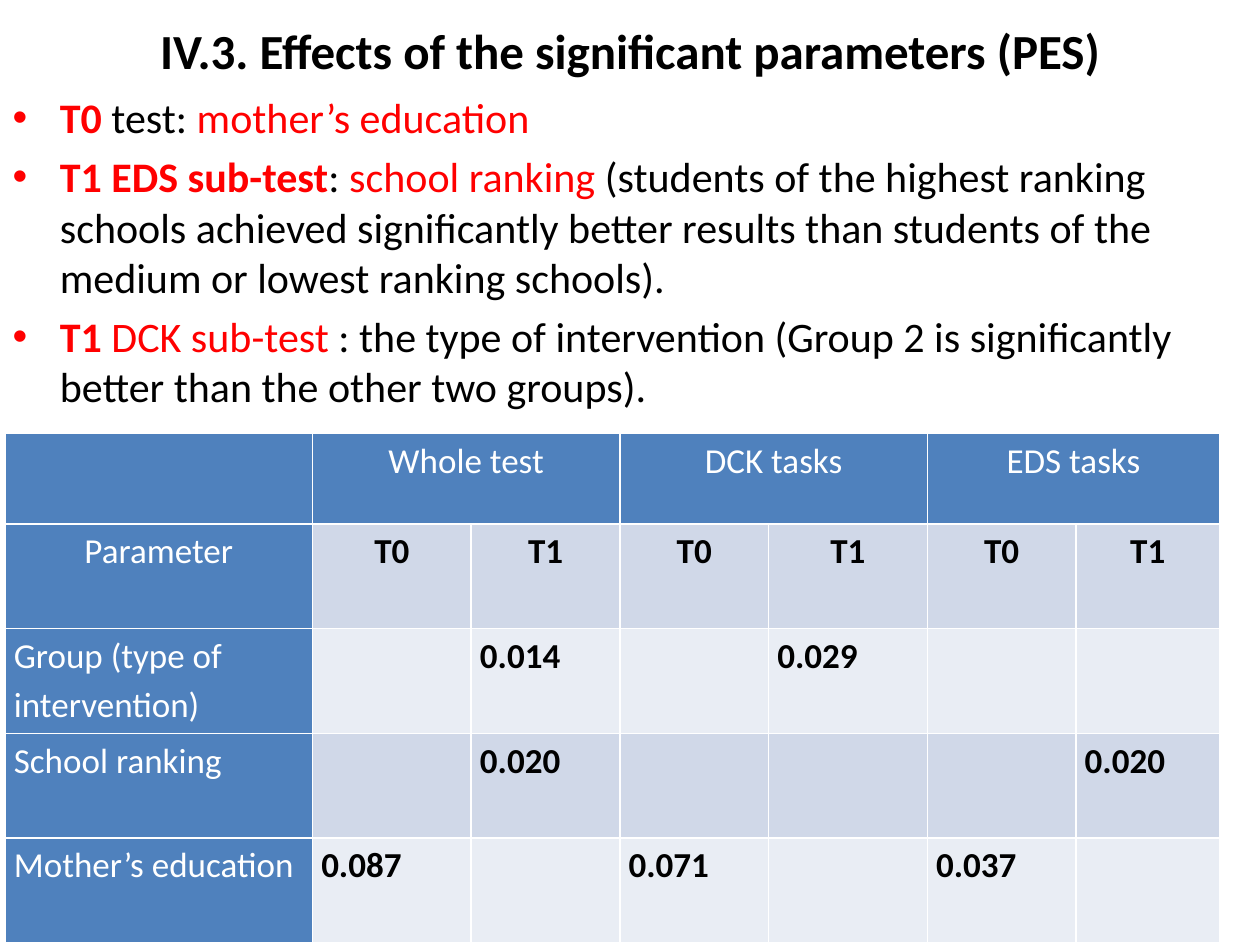
import pptx
import pptx.util
import pptx.dml.color
import pptx.enum.text

Inches, Pt = pptx.util.Inches, pptx.util.Pt
ALIGN = pptx.enum.text.PP_ALIGN
FONT = "Calibri"
COLORS = {"black": "000000", "red": "FF0000", "white": "FFFFFF",
          "header": "4F81BD", "band_dark": "D0D8E8", "band_light": "E9EDF4"}

TITLE = "IV.3. Effects of the significant parameters (PES)"
# Each bullet is a list of (text, colour, bold)
BULLETS = [
    [("T0 ", "red", True), ("test: ", "black", False),
     ("mother’s education", "red", False)],
    [("T1 EDS sub-test", "red", True), (": ", "black", False),
     ("school ranking ", "red", False),
     ("(students of the highest ranking schools achieved significantly better "
      "results than students of the medium or lowest ranking schools).", "black", False)],
    [("T1 ", "red", True), ("DCK sub-test ", "red", False),
     (": the type of intervention (Group 2 is significantly better than "
      "the other two groups).", "black", False)],
]
ROWS = [
    ["", "Whole test", "", "DCK tasks", "", "EDS tasks", ""],
    ["Parameter"] + ["T0", "T1"] * 3,
    ["Group (type of intervention)", "", "0.014", "", "0.029", "", ""],
    ["School ranking", "", "0.020", "", "", "", "0.020"],
    ["Mother’s education", "0.087", "", "0.071", "", "0.037", ""],
]
COL_WIDTHS = [2.44, 1.26, 1.18, 1.18, 1.26, 1.18, 1.14]
ROW_HEIGHTS = [0.72] + [0.83] * 4


def rgb(name):
    return pptx.dml.color.RGBColor.from_string(COLORS[name])


def set_attrs(obj, values):
    for name, value in values.items():
        setattr(obj, name, value)


def place(sp, box):
    names = ("left", "top", "width", "height")
    set_attrs(sp, dict(zip(names, map(Inches, box))))


def add_run(p, text, size, color, bold):
    r = p.add_run()
    r.text = text
    set_attrs(r.font, {"name": FONT, "size": Pt(size), "bold": bold})
    r.font.color.rgb = rgb(color)


def fill_title(s, box):
    sp = s.shapes.title
    place(sp, box)
    tf = sp.text_frame
    tf.auto_size = pptx.enum.text.MSO_AUTO_SIZE.NONE
    add_run(tf.paragraphs[0], TITLE, 28, "black", True)


def fill_bullets(s, box):
    sp = s.placeholders[1]
    place(sp, box)
    tf = sp.text_frame
    tf.auto_size = pptx.enum.text.MSO_AUTO_SIZE.NONE
    for i, runs in enumerate(BULLETS):
        p = tf.add_paragraph() if i else tf.paragraphs[0]
        for text, color, bold in runs:
            add_run(p, text, 24, color, bold)


def format_cell(cell, text, row, col):
    header = row == 0 or col == 0
    band = "band_dark" if row % 2 else "band_light"
    cell.fill.solid()
    cell.fill.fore_color.rgb = rgb("header" if header else band)
    if not text:
        return
    set_attrs(cell, {"margin_left": Inches(0.07), "margin_right": Inches(0.07),
                     "margin_top": 0, "margin_bottom": 0})
    p = cell.text_frame.paragraphs[0]
    set_attrs(p, {"alignment": ALIGN.CENTER if row < 2 else ALIGN.LEFT,
                  "line_spacing": 1.15})
    add_run(p, text, 20, "white" if header else "black", not header)


def add_results_table(s, box):
    table = s.shapes.add_table(len(ROWS), len(COL_WIDTHS), *map(Inches, box)).table
    for column, width in zip(table.columns, COL_WIDTHS):
        column.width = Inches(width)
    for row, height in zip(table.rows, ROW_HEIGHTS):
        row.height = Inches(height)
    # Each test heading spans its T0 and T1 columns
    for col in range(1, len(COL_WIDTHS), 2):
        table.cell(0, col).merge(table.cell(0, col + 1))
    for i, values in enumerate(ROWS):
        for j, text in enumerate(values):
            format_cell(table.cell(i, j), text, i, j)


def main():
    prs = pptx.Presentation()
    set_attrs(prs, {"slide_width": Inches(10), "slide_height": Inches(7.5)})
    s = prs.slides.add_slide(prs.slide_layouts[1])
    fill_title(s, (0.5, 0, 9, 0.8))
    fill_bullets(s, (0, 0.68, 10, 5.9))
    add_results_table(s, (0.04, 3.44, sum(COL_WIDTHS), sum(ROW_HEIGHTS)))
    prs.save("out.pptx")


if __name__ == "__main__":
    main()
